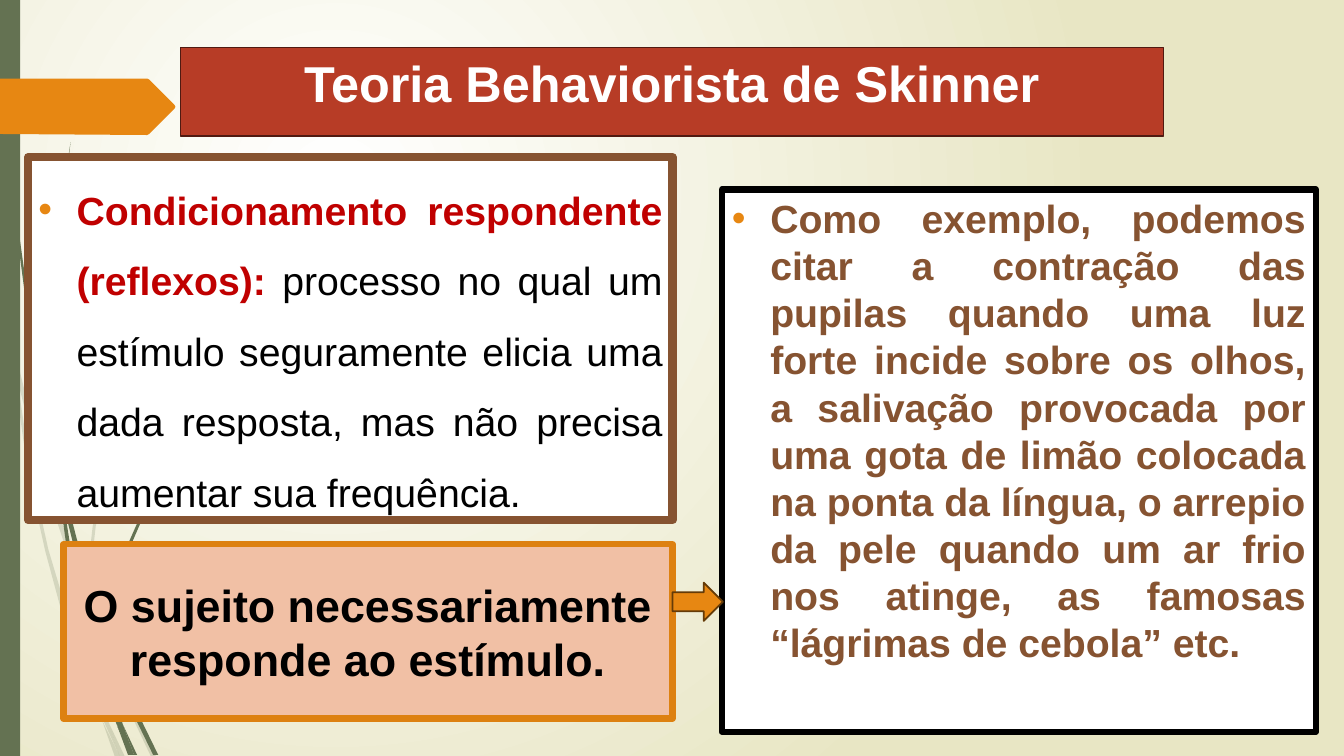
from dataclasses import dataclass

import pptx
import pptx.dml.color
import pptx.enum.dml
import pptx.enum.shapes
import pptx.enum.text
import pptx.oxml
import pptx.oxml.ns
import pptx.util
from pptx.util import Inches

RGBColor = pptx.dml.color.RGBColor
PP_ALIGN = pptx.enum.text.PP_ALIGN
ANCHOR = pptx.enum.text.MSO_ANCHOR
PRESET = pptx.enum.shapes.MSO_SHAPE

WHITE = RGBColor(0xFF, 0xFF, 0xFF)
BLACK = RGBColor(0x00, 0x00, 0x00)
CREAM = RGBColor(0xE8, 0xE6, 0xC4)
OLIVE = RGBColor(0x64, 0x72, 0x52)
ORANGE = RGBColor(0xE7, 0x87, 0x12)
BRICK = RGBColor(0xB7, 0x3C, 0x26)
DARK_BRICK = RGBColor(0x50, 0x1A, 0x11)
BROWN = RGBColor(0x86, 0x53, 0x31)
DARK_BROWN = RGBColor(0x65, 0x3B, 0x08)
RED = RGBColor(0xC0, 0x00, 0x00)
PEACH = RGBColor(0xF1, 0xC0, 0xA5)
AMBER = RGBColor(0xDD, 0x81, 0x11)

Points = list[tuple[float, float]]


@dataclass
class TextRun:
    text: str
    size: int
    color: RGBColor
    bold: bool = True


@dataclass
class Panel:
    box: tuple[float, float, float, float]
    fill: RGBColor
    line: RGBColor
    line_width: float
    runs: list[TextRun]
    alignment: PP_ALIGN = PP_ALIGN.CENTER
    anchor: ANCHOR = ANCHOR.TOP
    spacing: float = 1.0
    bulleted: bool = False


TITLE = Panel((1.79, 0.47, 9.75, 0.88), BRICK, DARK_BRICK, 1.25,
              [TextRun("Teoria Behaviorista de Skinner", 36, WHITE)])
CONCEPT = Panel((0.28, 1.56, 6.39, 3.6), WHITE, BROWN, 6, [
    TextRun("Condicionamento respondente (reflexos):", 28, RED),
    TextRun(" processo no qual um estímulo seguramente elicia uma dada resposta, "
            "mas não precisa aumentar sua frequência. ", 28, BLACK, False),
], PP_ALIGN.JUSTIFY, spacing=1.5, bulleted=True)
EXAMPLE = Panel((7.16, 1.88, 5.89, 5.38), WHITE, BLACK, 4.5, [
    TextRun("Como exemplo, podemos citar a contração das pupilas quando uma luz forte "
            "incide sobre os olhos, a salivação provocada por uma gota de limão colocada "
            "na ponta da língua, o arrepio da pele quando um ar frio nos atinge, "
            "as famosas “lágrimas de cebola” etc. ", 28, BROWN),
], PP_ALIGN.JUSTIFY, bulleted=True)
CONCLUSION = Panel((0.63, 5.4, 6.04, 1.73), PEACH, AMBER, 4.5,
                   [TextRun("O sujeito necessariamente responde ao estímulo.", 32, BLACK)],
                   anchor=ANCHOR.MIDDLE)

PALE_WISPS: list[Points] = [
    [(0.11, 3.5), (0.09, 3.22), (0, 2.82), (0, 2.99), (0.1, 3.44)],
    [(0.58, 5.22), (0.84, 5.99), (0.85, 5.86), (0.62, 5.2), (0.37, 4.4), (0.14, 3.45),
     (0.17, 3.76), (0.36, 4.5)],
    [(0.92, 6.07), (0.88, 5.96), (0.88, 6.1), (1.23, 6.94), (1.5, 7.51), (1.55, 7.51),
     (1.27, 6.92)],
    [(1.19, 7.51), (1.24, 7.51), (1.05, 7.11)],
    [(0.93, 6.83), (0.7, 6.19), (0.48, 5.45), (0.31, 4.69), (0.17, 3.76), (0.11, 3.5),
     (0.28, 4.7), (0.45, 5.47), (0.65, 6.21), (0.92, 6.93), (1.01, 7.14), (0.99, 7.07)],
    [(0.88, 5.84), (0.95, 5.22), (1.1, 4.62), (1.6, 3.49), (2.29, 2.45), (2.68, 1.98),
     (3.12, 1.54), (3.12, 1.53), (2.68, 1.97), (2.28, 2.44), (1.58, 3.48), (1.07, 4.61),
     (0.92, 5.22), (0.85, 5.84), (0.88, 5.96)],
    [(1.01, 7.14), (1.14, 7.51), (1.19, 7.51)],
    [(0.96, 6.92), (0.93, 6.83), (0.99, 7.07), (1.19, 7.51), (1.05, 7.11)],
]
DARK_WISPS: list[Points] = [
    [(0.07, 1.1), (0.17, 2.33), (0.33, 3.55), (0.57, 4.81), (0.55, 4.53), (0.36, 3.55),
     (0.19, 2.32), (0.08, 1.09), (0.04, 0), (0.03, 0), (0.04, 0.48)],
    [(0.88, 5.92), (1.06, 6.45), (1.06, 6.31), (0.93, 5.9), (0.76, 5.34), (0.6, 4.72),
     (0.64, 5.05), (0.75, 5.49)],
    [(1.13, 6.49), (1.1, 6.41), (1.11, 6.56), (1.32, 7.08), (1.52, 7.49), (1.57, 7.49),
     (1.36, 7.06)],
    [(1.1, 6.91), (0.98, 6.57), (0.72, 5.56), (0.64, 5.05), (0.57, 4.77), (0.68, 5.57),
     (0.93, 6.59), (1.17, 7.22), (1.16, 7.17)],
    [(0.6, 4.72), (0.54, 3.49), (0.58, 2.45), (0.7, 1.41), (0.62, 1.93), (0.56, 2.45),
     (0.52, 3.49), (0.55, 4.49)],
    [(1.33, 7.49), (1.36, 7.49), (1.22, 7.19)],
    [(1.11, 6.33), (1.15, 5.92), (1.25, 5.52), (1.58, 4.76), (2.05, 4.06), (2.61, 3.44),
     (2.6, 3.44), (2.04, 4.05), (1.56, 4.74), (1.22, 5.51), (1.12, 5.91), (1.06, 6.31),
     (1.1, 6.41)],
    [(1.17, 7.22), (1.27, 7.49), (1.31, 7.49)],
    [(1.06, 6.45), (1.1, 6.91), (1.22, 7.19), (1.21, 7.16), (1.11, 6.56)],
    [(1.16, 7.06), (1.1, 6.91), (1.17, 7.22), (1.3, 7.49), (1.33, 7.49), (1.22, 7.19)],
]
TITLE_TAB: Points = [(0, 0.78), (1.46, 0.78), (1.48, 0.79), (1.73, 1.04), (1.74, 1.06),
                     (1.73, 1.08), (1.48, 1.33), (1.46, 1.34), (0, 1.33)]


def add_xml(parent, tag: str, **attributes: str):
    element = pptx.oxml.ns.qn(tag)
    child = parent.makeelement(element, attributes)
    parent.append(child)
    return child


def paint_background(slide) -> None:
    fill = slide.background.fill
    fill.gradient()
    for stop, color, position in zip(fill.gradient_stops, (WHITE, CREAM), (0, 1)):
        stop.color.rgb = color
        stop.position = position
    gradient = slide.background._cSld.find(".//" + pptx.oxml.ns.qn("a:gradFill"))
    gradient.remove(gradient.find(pptx.oxml.ns.qn("a:lin")))
    circle = add_xml(gradient, "a:path", path="circle")
    add_xml(circle, "a:fillToRect", l="50000", t="50000", r="100000", b="100000")


def paint_shape(shape, fill: RGBColor, line: RGBColor | None = None, width: float = 0) -> None:
    shape.shadow.inherit = False
    shape.fill.solid()
    shape.fill.fore_color.rgb = fill
    if line is None:
        shape.line.fill.background()
    else:
        shape.line.color.rgb = line
        shape.line.width = pptx.util.Pt(width)


def add_outline(slide, points: Points, color: RGBColor, opacity: int = 100) -> None:
    corners = [(Inches(x), Inches(y)) for x, y in points]
    builder = slide.shapes.build_freeform(*corners[0])
    builder.add_line_segments(corners[1:], close=True)
    shape = builder.convert_to_shape()
    paint_shape(shape, color)
    if opacity < 100:
        solid = shape._element.spPr.find(pptx.oxml.ns.qn("a:solidFill"))
        add_xml(solid[0], "a:alpha", val=str(opacity * 1000))


def add_bullet(paragraph) -> None:
    properties = paragraph._p.get_or_add_pPr()
    properties.set("marL", str(Inches(0.38)))
    properties.set("indent", str(-Inches(0.38)))
    bullet_color = add_xml(properties, "a:buClr")
    add_xml(bullet_color, "a:srgbClr", val=str(ORANGE))
    add_xml(properties, "a:buFont", typeface="Arial")
    add_xml(properties, "a:buChar", char="•")


def fill_panel(shape, panel: Panel) -> None:
    shape.left, shape.top, shape.width, shape.height = map(Inches, panel.box)
    paint_shape(shape, panel.fill, panel.line, panel.line_width)
    frame = shape.text_frame
    frame.word_wrap = True
    frame.auto_size = pptx.enum.text.MSO_AUTO_SIZE.NONE
    frame.vertical_anchor = panel.anchor
    paragraph = frame.paragraphs[0]
    paragraph.alignment = panel.alignment
    paragraph.line_spacing = panel.spacing
    paragraph.space_before = pptx.util.Pt(10 if panel.bulleted else 0)
    if panel.bulleted:
        add_bullet(paragraph)
    for text_run in panel.runs:
        run = paragraph.add_run()
        run.text = text_run.text
        run.font.name = "Arial"
        run.font.size = pptx.util.Pt(text_run.size)
        run.font.bold = text_run.bold
        run.font.color.rgb = text_run.color


def main() -> None:
    presentation = pptx.Presentation()
    presentation.slide_width = Inches(13.33)
    presentation.slide_height = Inches(7.5)
    slide = presentation.slides.add_slide(presentation.slide_layouts.get_by_name("Two Content"))
    paint_background(slide)
    for points in PALE_WISPS:
        add_outline(slide, points, OLIVE, 20)
    for points in DARK_WISPS:
        add_outline(slide, points, OLIVE)
    side_bar = slide.shapes.add_shape(PRESET.RECTANGLE, 0, 0, Inches(0.2), Inches(7.5))
    paint_shape(side_bar, OLIVE)
    add_outline(slide, TITLE_TAB, ORANGE)
    for placeholder, panel in zip(list(slide.placeholders), (TITLE, CONCEPT, EXAMPLE)):
        fill_panel(placeholder, panel)
        slide.shapes._spTree.append(placeholder._element)
    conclusion = slide.shapes.add_shape(PRESET.RECTANGLE, *map(Inches, CONCLUSION.box))
    fill_panel(conclusion, CONCLUSION)
    arrow = slide.shapes.add_shape(PRESET.RIGHT_ARROW, *map(Inches, (6.67, 5.78, 0.5, 0.38)))
    paint_shape(arrow, ORANGE, DARK_BROWN, 1.25)
    presentation.save("out.pptx")


if __name__ == "__main__":
    main()
